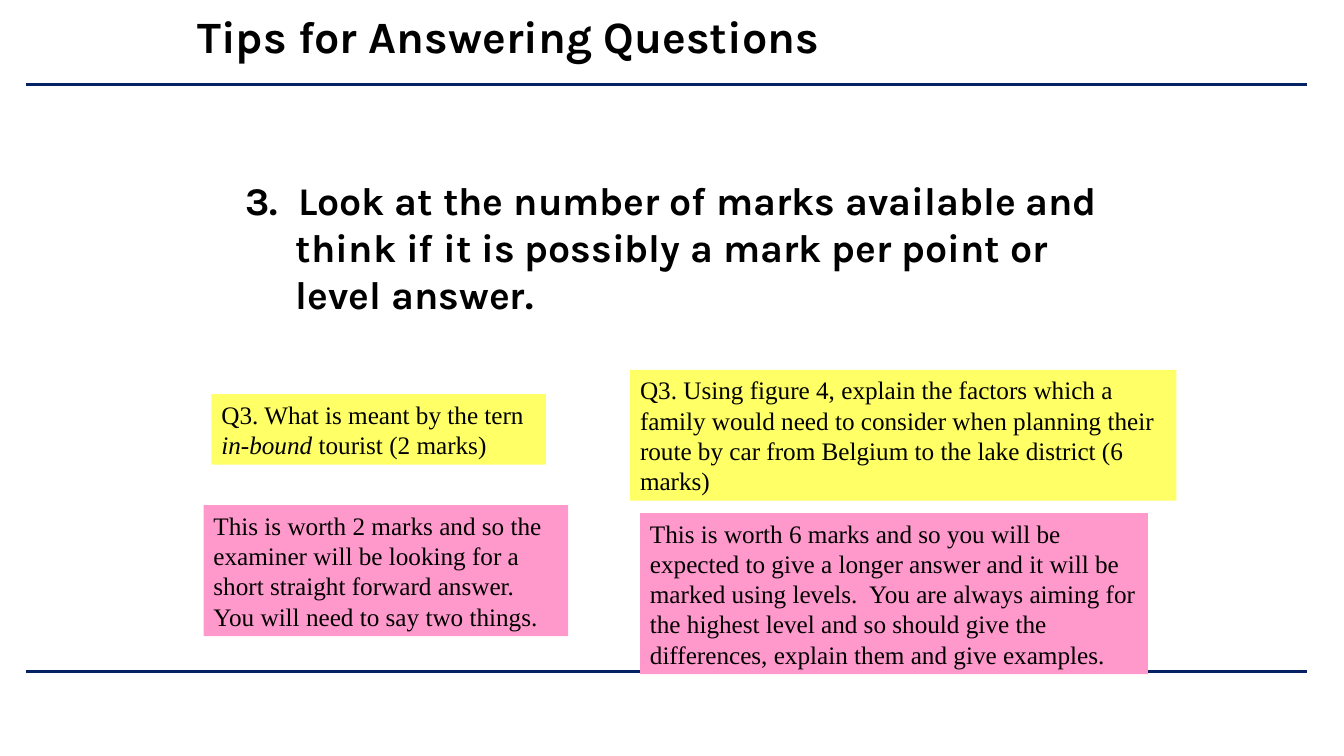
from pptx import Presentation
from pptx.dml.color import RGBColor
from pptx.enum.shapes import MSO_CONNECTOR, MSO_SHAPE
from pptx.enum.text import MSO_ANCHOR, MSO_AUTO_SIZE, PP_ALIGN
from pptx.oxml.ns import qn
from pptx.util import Cm, Pt
from lxml.etree import SubElement

COLOURS = {"rule": "052264", "text": "000000", "question": "FFFF66", "advice": "FF99CC"}


def colour(name):
    return RGBColor.from_string(COLOURS[name])


def write(shape, runs, font_name, size, bold=False):
    """Fill a shape with one left-aligned paragraph of (text, italic) runs."""
    frame = shape.text_frame
    frame.word_wrap = True
    frame.auto_size = MSO_AUTO_SIZE.SHAPE_TO_FIT_TEXT
    frame.vertical_anchor = MSO_ANCHOR.TOP
    paragraph = frame.paragraphs[0]
    paragraph.alignment = PP_ALIGN.LEFT
    for text, italic in runs:
        run = paragraph.add_run()
        run.text = text
        run.font.name = font_name
        run.font.size = Pt(size)
        run.font.bold = bold
        run.font.italic = italic
        run.font.color.rgb = colour("text")
    return paragraph


presentation = Presentation()
presentation.slide_width = Cm(33.87)
presentation.slide_height = Cm(19.05)
slide = presentation.slides.add_slide(presentation.slide_layouts[5])

# Rules above and below the content
for y, width in [(2.13, 1.5), (16.92, 1.75)]:
    rule = slide.shapes.add_connector(
        MSO_CONNECTOR.STRAIGHT, Cm(0.66), Cm(y), Cm(32.94), Cm(y))
    rule.line.color.rgb = colour("rule")
    rule.line.width = Pt(width)
    SubElement(rule._element.spPr, qn("a:effectLst"))

# Title
title = slide.shapes.title
title.left, title.top, title.width, title.height = Cm(4.72), Cm(0.08), Cm(17.27), Cm(1.63)
write(title, [("Tips for Answering Questions", False)], "Karla", 32, bold=True)

# Tip with a hanging indent
tip = slide.shapes.add_textbox(Cm(5.94), Cm(4.32), Cm(22), Cm(3.81))
tip_paragraph = write(tip, [
    ("3.  Look at the number of marks available and think if it is possibly "
     "a mark per point or level answer.", False)], "Karla", 28, bold=True)
properties = tip_paragraph._p.get_or_add_pPr()
properties.set("marL", str(Cm(1.27)))
properties.set("indent", str(-Cm(1.27)))

# Example questions and the advice on each
notes = [
    ("question", 5.33, 9.93, 8.43, 1.78, [
        ("Q3. What is meant by the tern ", False),
        ("in-bound", True),
        (" tourist (2 marks)", False)]),
    ("question", 15.88, 9.32, 13.77, 3.3, [
        ("Q3. Using figure 4, explain the factors which a family would need to "
         "consider when planning their route by car from Belgium to the lake "
         "district (6 marks)", False)]),
    ("advice", 5.13, 12.73, 9.19, 3.3, [
        ("This is worth 2 marks and so the examiner will be looking for a short "
         "straight forward answer.  You will need to say two things.", False)]),
    ("advice", 16.13, 12.93, 12.8, 4.06, [
        ("This is worth 6 marks and so you will be expected to give a longer "
         "answer and it will be marked using levels.  You are always aiming for "
         "the highest level and so should give the differences, explain them "
         "and give examples.", False)]),
]
for kind, left, top, width, height, runs in notes:
    note = slide.shapes.add_shape(
        MSO_SHAPE.RECTANGLE, Cm(left), Cm(top), Cm(width), Cm(height))
    note.shadow.inherit = False
    note.fill.solid()
    note.fill.fore_color.rgb = colour(kind)
    note.line.fill.background()
    write(note, runs, "Times New Roman", 18)

presentation.save("out.pptx")
